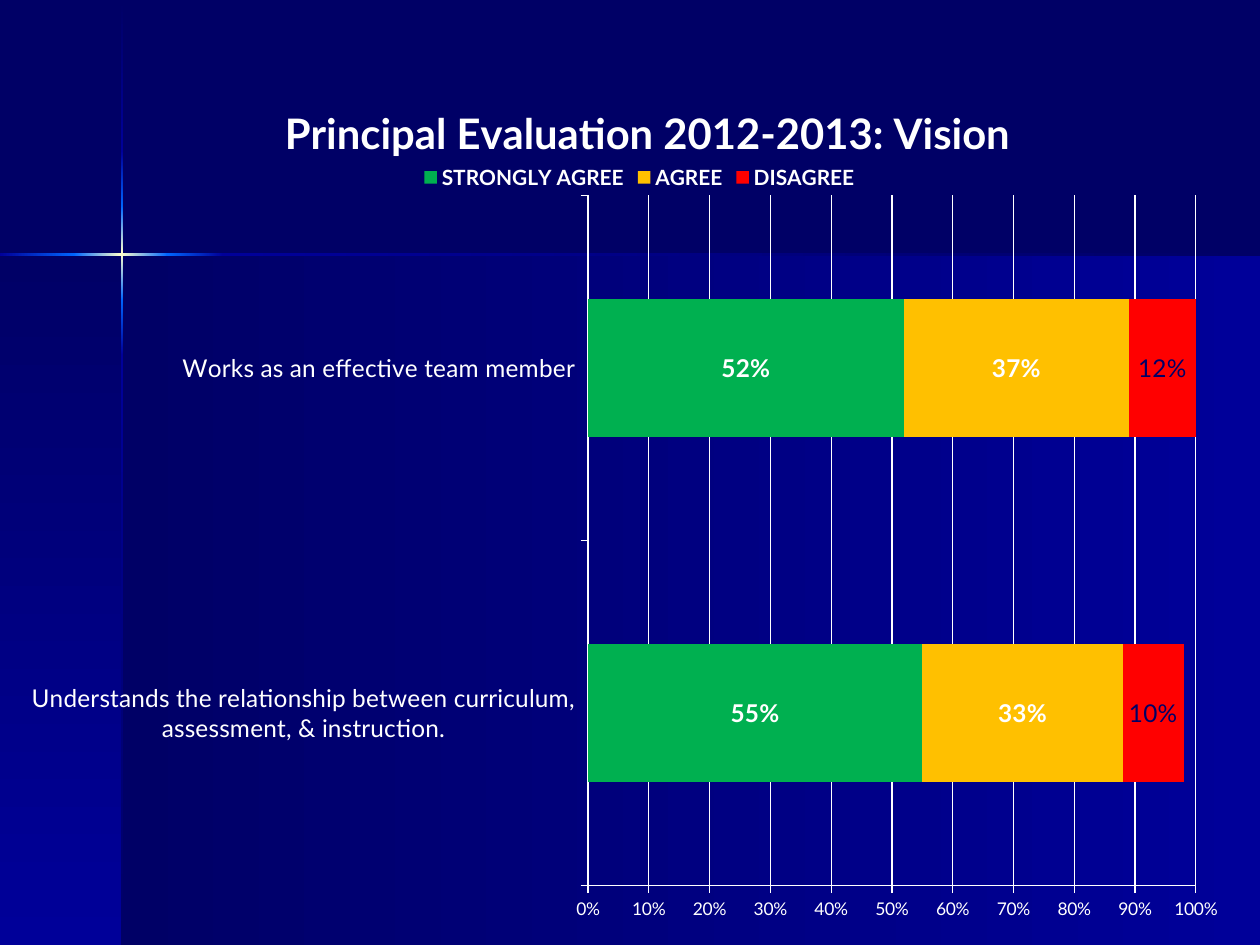
from dataclasses import dataclass
from itertools import pairwise

from pptx import Presentation
from pptx.chart.data import CategoryChartData
from pptx.dml.color import RGBColor
from pptx.enum.chart import XL_CHART_TYPE as ChartType
from pptx.enum.chart import XL_LABEL_POSITION as LabelPosition
from pptx.enum.chart import XL_LEGEND_POSITION as LegendPosition
from pptx.enum.chart import XL_TICK_MARK as TickMark
from pptx.enum.shapes import MSO_SHAPE as ShapeType
from pptx.oxml import parse_xml
from pptx.oxml.ns import nsdecls
from pptx.util import Inches, Pt

COLUMNS, ROWS = 10, 7.5


@dataclass(frozen=True)
class Theme:
    font: str = "Lato"
    night: str = "000066"
    royal: str = "000099"
    bright: str = "0066FF"
    glow: str = "FFFFCC"
    white: str = "FFFFFF"
    green: str = "00B050"
    amber: str = "FFC000"
    red: str = "FF0000"
    title_size: int = 24
    label_size: int = 14
    legend_size: int = 12
    axis_size: int = 10


class SlideBuilder:
    """Places elements on a grid of COLUMNS by ROWS cells."""

    def __init__(self, presentation, theme):
        self.theme = theme
        self.column = presentation.slide_width / COLUMNS
        self.row = presentation.slide_height / ROWS
        self.slide = presentation.slides.add_slide(presentation.slide_layouts[6])

    def place(self, left, top, width, height):
        return (round(left * self.column), round(top * self.row),
                round(width * self.column), round(height * self.row))

    def style_font(self, font, size, color, bold=False):
        font.name = self.theme.font
        font.size = Pt(size)
        font.bold = bold
        font.color.rgb = RGBColor.from_string(color)

    def background(self, color):
        fill = self.slide.background.fill
        fill.solid()
        fill.fore_color.rgb = RGBColor.from_string(color)

    def gradient_panel(self, box, colors, angle):
        """Add a rectangle with evenly spaced colours; the angle turns clockwise."""
        shape = self.slide.shapes.add_shape(ShapeType.RECTANGLE, *self.place(*box))
        shape.shadow.inherit = False
        shape.line.fill.background()
        step = 100000 // (len(colors) - 1)
        stops = "".join(
            f'<a:gs pos="{index * step}"><a:srgbClr val="{color}"/></a:gs>'
            for index, color in enumerate(colors))
        gradient = parse_xml(
            f'<a:gradFill {nsdecls("a")} rotWithShape="1"><a:gsLst>{stops}</a:gsLst>'
            f'<a:lin ang="{angle * 60000}" scaled="0"/></a:gradFill>')
        shape._element.spPr.prstGeom.addnext(gradient)

    def light_ray(self, bounds, segments, offset, vertical, thickness=0.02):
        """Add a line of gradient segments that overlap a little, so no seam shows."""
        for (start, end), colors in zip(pairwise(bounds), segments):
            start = max(start - 0.01, 0)
            if vertical:
                box = (offset, start, thickness, end - start)
            else:
                box = (start, offset, end - start, thickness)
            self.gradient_panel(box, colors, 90 if vertical else 0)

    def stacked_bars(self, box, title, categories, series, title_at, legend_at, plot_box):
        """Add a stacked bar chart; series rows are name, values, fill, label colour, bold."""
        theme = self.theme
        data = CategoryChartData(number_format="0%")
        data.categories = categories
        for name, values, *_ in series:
            data.add_series(name, values)
        chart = self.slide.shapes.add_chart(
            ChartType.BAR_STACKED, *self.place(*box), data).chart
        self.style_font(chart.font, theme.axis_size, theme.white)

        chart.has_title = True
        chart.chart_title.include_in_layout = False
        chart.chart_title.text_frame.text = title
        run = chart.chart_title.text_frame.paragraphs[0].runs[0]
        self.style_font(run.font, theme.title_size, theme.white, bold=True)

        chart.has_legend = True
        chart.legend.position = LegendPosition.TOP
        chart.legend.include_in_layout = False
        self.style_font(chart.legend.font, theme.legend_size, theme.white, bold=True)

        bars = chart.plots[0]
        bars.gap_width, bars.overlap = 150, 100
        bars.vary_by_categories = False
        for item, (_, _, fill, label_color, bold) in zip(bars.series, series):
            item.format.fill.solid()
            item.format.fill.fore_color.rgb = RGBColor.from_string(fill)
            labels = item.data_labels
            labels.show_value = True
            labels.position = LabelPosition.CENTER
            labels.number_format, labels.number_format_is_linked = "0%", False
            self.style_font(labels.font, theme.label_size, label_color, bold)

        self.style_axis(chart.category_axis, theme.label_size)
        value_axis = chart.value_axis
        self.style_axis(value_axis, theme.axis_size)
        value_axis.minimum_scale, value_axis.maximum_scale = 0, 1
        value_axis.major_unit = 0.1
        value_axis.tick_labels.number_format = "0%"
        value_axis.tick_labels.number_format_is_linked = False
        value_axis.has_major_gridlines = True
        self.style_line(value_axis.major_gridlines.format.line)

        parts = chart._chartSpace.chart
        self.fix_layout(parts.find("{*}title"), 1, box, title_at)
        self.fix_layout(parts.find("{*}legend"), 1, box, legend_at)
        self.fix_layout(parts.plotArea, 0, box, plot_box)

    def style_axis(self, axis, size):
        axis.major_tick_mark = TickMark.OUTSIDE
        axis.minor_tick_mark = TickMark.NONE
        axis.has_major_gridlines = False
        self.style_font(axis.tick_labels.font, size, self.theme.white)
        self.style_line(axis.format.line)

    def style_line(self, line):
        line.color.rgb = RGBColor.from_string(self.theme.white)
        line.width = Pt(0.75)

    def fix_layout(self, part, index, chart_box, place):
        """Pin a chart part to a grid position, with its inner size if one is given."""
        left, top, width, height = chart_box
        offsets = (left, top, 0, 0)
        extents = (width, height, width, height)
        shares = "".join(
            f'<c:{key} val="{(value - offset) / extent:.4f}"/>'
            for key, value, offset, extent in zip("xywh", place, offsets, extents))
        target = '<c:layoutTarget val="inner"/>' if len(place) == 4 else ""
        modes = "".join(f'<c:{key}Mode val="edge"/>' for key in "xy")
        for layout in part.findall("{*}layout"):
            part.remove(layout)
        part.insert(index, parse_xml(
            f'<c:layout {nsdecls("c")}><c:manualLayout>{target}{modes}{shares}'
            f'</c:manualLayout></c:layout>'))


def main():
    presentation = Presentation()
    presentation.slide_width, presentation.slide_height = Inches(COLUMNS), Inches(ROWS)
    theme = Theme()
    builder = SlideBuilder(presentation, theme)

    builder.background(theme.night)
    cross_x, cross_y = 0.97, 2.02
    panel_colors = (theme.night, theme.royal)
    builder.gradient_panel(
        (cross_x, cross_y, COLUMNS - cross_x, ROWS - cross_y), panel_colors, 0)
    builder.gradient_panel((0, cross_y, cross_x, ROWS - cross_y), panel_colors, 90)

    fade_in = [panel_colors, (theme.royal, theme.bright)]
    core = (theme.bright, theme.glow, theme.bright)
    fade_out = [colors[::-1] for colors in reversed(fade_in)]
    segments = [*fade_in, core, *fade_out]
    builder.light_ray((0.01, 1.21, 1.65, 2.38, 2.82, ROWS), segments,
                      cross_x - 0.01, vertical=True)
    builder.light_ray((0, 0.6, 1.33, 1.77, COLUMNS), segments[1:],
                      cross_y - 0.01, vertical=False)

    builder.stacked_bars(
        (0.25, 0.5, 9.48, 6.88),
        "Principal Evaluation 2012-2013: Vision",
        ["Understands the relationship between curriculum, assessment, & instruction.",
         "Works as an effective team member"],
        [("STRONGLY AGREE", (0.55, 0.52), theme.green, theme.white, True),
         ("AGREE", (0.33, 0.37), theme.amber, theme.white, True),
         ("DISAGREE", (0.1, 0.12), theme.red, theme.night, False)],
        title_at=(2.16, 0.75), legend_at=(3.28, 1.27),
        plot_box=(4.64, 1.55, 4.85, 5.48))
    presentation.save("out.pptx")


if __name__ == "__main__":
    main()
